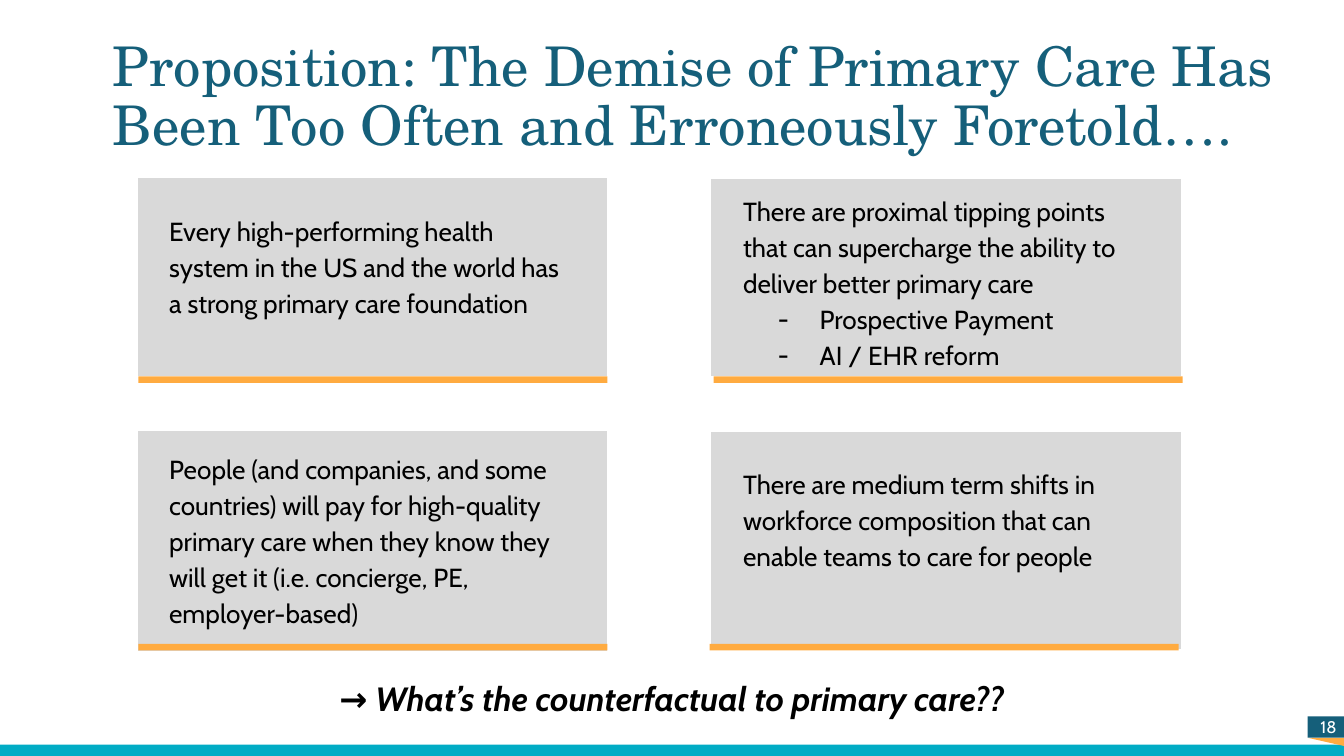
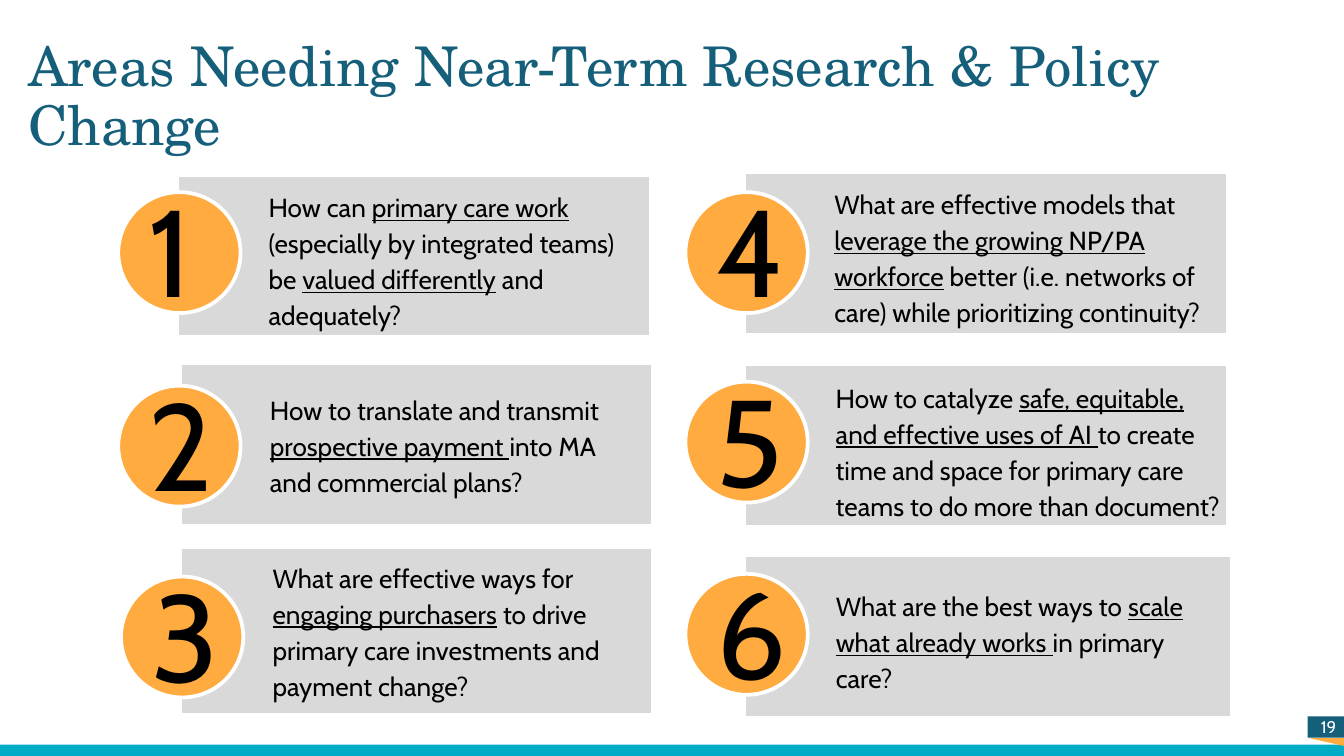
from dataclasses import dataclass

import lxml.etree
import pptx
import pptx.dml.color
import pptx.enum.shapes
import pptx.enum.text
import pptx.oxml.ns
import pptx.util

Inches = pptx.util.Inches
Shape = pptx.enum.shapes.MSO_SHAPE
Align = pptx.enum.text.PP_ALIGN
Anchor = pptx.enum.text.MSO_ANCHOR
qn = pptx.oxml.ns.qn


@dataclass(frozen=True)
class Theme:
    heading_font: str = "TeX Gyre Schola"
    body_font: str = "Cabin"
    teal: str = "155F7A"
    cyan: str = "00ACC5"
    orange: str = "FFAB40"
    grey: str = "D9D9D9"
    white: str = "FFFFFF"
    black: str = "000000"
    title_size: float = 29.3
    body_size: float = 14
    closing_size: float = 18
    number_size: float = 66
    page_size: float = 9
    body_spacing: float = 1.15
    title_spacing: float = 0.9


class Deck:
    """Holds the theme and the current slide."""

    def __init__(self, theme):
        self.theme = theme
        self.presentation = pptx.Presentation()
        # Widescreen, 16 to 9
        self.presentation.slide_width = Inches(10)
        self.presentation.slide_height = Inches(10) * 9 // 16
        self.slide = None

    def start_slide(self, title, title_box, page):
        theme = self.theme
        self.slide = self.presentation.slides.add_slide(self.presentation.slide_layouts[6])
        self.text(title, title_box, insets=(0, 0, 0, 0), spacing=theme.title_spacing,
                  name=theme.heading_font, size=theme.title_size, color=theme.teal)
        self.footer(page)

    def shape(self, kind, box, fill, outline=None):
        shape = self.slide.shapes.add_shape(kind, *map(Inches, box))
        shape.shadow.inherit = False
        shape.fill.solid()
        shape.fill.fore_color.rgb = pptx.dml.color.RGBColor.from_string(fill)
        if outline:
            shape.line.color.rgb = pptx.dml.color.RGBColor.from_string(outline)
            shape.line.width = pptx.util.Pt(2)
        else:
            shape.line.fill.background()
        return shape

    def card(self, box):
        self.shape(Shape.RECTANGLE, box, self.theme.grey, self.theme.white)

    def accent(self, left, top):
        self.shape(Shape.RECTANGLE, (left, top, 3.49, 0.05), self.theme.orange)

    def number_disc(self, number, left, top):
        self.shape(Shape.OVAL, (left, top, 0.91, 0.9), self.theme.orange, self.theme.white)
        self.text(str(number), (left + 0.13, top - 0.18, 0.57, 1.21),
                  spacing=1.0, size=self.theme.number_size)

    def footer(self, page):
        theme = self.theme
        self.shape(Shape.RECTANGLE, (0, 5.54, 10.04, 0.1), theme.cyan)
        fold = self.shape(Shape.RIGHT_TRIANGLE, (9.85, 5.37, 0.07, 0.31), theme.orange)
        fold.rotation = 270
        fold.element.spPr.find(qn("a:xfrm")).set("flipH", "1")
        tab = self.shape(Shape.RECTANGLE, (9.73, 5.33, 0.31, 0.16), theme.teal)
        self.fill_frame(tab.text_frame, str(page), insets=(0, 0, 0, 0.01), anchor=Anchor.MIDDLE,
                        align=Align.CENTER, spacing=1.0, size=theme.page_size, color=theme.white)

    def text(self, content, box, **options):
        textbox = self.slide.shapes.add_textbox(*map(Inches, box))
        self.fill_frame(textbox.text_frame, content, **options)

    def fill_frame(self, frame, content, bullets=(), insets=(0.1, 0.05, 0.1, 0.05),
                   anchor=Anchor.TOP, align=Align.LEFT, spacing=None, **font):
        """Underscores in the content switch underlining on and off."""
        left, top, right, bottom = map(Inches, insets)
        frame_format = {"word_wrap": True, "vertical_anchor": anchor, "margin_left": left,
                        "margin_top": top, "margin_right": right, "margin_bottom": bottom}
        for key, value in frame_format.items():
            setattr(frame, key, value)
        for index, line in enumerate((content, *bullets)):
            paragraph = frame.add_paragraph() if index else frame.paragraphs[0]
            if index:
                self.bullet(paragraph)
            paragraph.alignment = align
            paragraph.line_spacing = spacing or self.theme.body_spacing
            for part, words in enumerate(line.split("_")):
                run = paragraph.add_run()
                run.text = words
                self.style_font(run.font, underline=part % 2 == 1, **font)

    def bullet(self, paragraph):
        paragraph.level = 1
        properties = paragraph._p.get_or_add_pPr()
        properties.set("marL", str(Inches(0.57)))
        properties.set("indent", str(Inches(-0.31)))
        color = lxml.etree.SubElement(properties, qn("a:buClr"))
        lxml.etree.SubElement(color, qn("a:srgbClr"), val=self.theme.black)
        lxml.etree.SubElement(properties, qn("a:buFont"), typeface=self.theme.body_font)
        lxml.etree.SubElement(properties, qn("a:buChar"), char="-")

    def style_font(self, font, size=None, color=None, **values):
        font_format = {"name": self.theme.body_font,
                       "size": pptx.util.Pt(size or self.theme.body_size), **values}
        for key, value in font_format.items():
            setattr(font, key, value)
        font.color.rgb = pptx.dml.color.RGBColor.from_string(color or self.theme.black)


def build_proposition(deck):
    deck.start_slide("Proposition: The Demise of Primary Care Has Been Too Often "
                     "and Erroneously Foretold….", (0.84, 0.29, 8.89, 0.89), 18)
    deck.text("→ What’s the counterfactual to primary care??", (0.46, 4.95, 9.08, 0.72),
              align=Align.CENTER, size=deck.theme.closing_size, bold=True, italic=True)

    # Each argument: card left, top, height; text top, height; accent left, top
    arguments = [
        ((1.01, 1.31, 1.5), (1.52, 0.9), (1.03, 2.8),
         "Every high-performing health system in the US and the world has a strong "
         "primary care foundation", ()),
        ((1.01, 3.19, 1.67), (3.29, 1.44), (1.03, 4.79),
         "People (and companies, and some countries) will pay for high-quality primary care "
         "when they know they will get it (i.e. concierge, PE, employer-based)", ()),
        ((5.28, 1.32, 1.49), (1.37, 1.44), (5.31, 2.8),
         "There are proximal tipping points that can supercharge the ability to deliver "
         "better primary care", ("Prospective Payment", "AI / EHR reform")),
        ((5.28, 3.2, 1.64), (3.4, 0.9), (5.28, 4.79),
         "There are medium term shifts in workforce composition that can enable teams "
         "to care for people", ()),
    ]
    for (left, top, height), (text_top, text_height), accent, content, bullets in arguments:
        deck.card((left, top, 3.52, height))
        deck.text(content, (left + 0.15, text_top, 3.21, text_height), bullets=bullets)
        deck.accent(*accent)


def build_research_areas(deck):
    deck.start_slide("Areas Needing Near-Term Research & Policy Change",
                     (0.21, 0.29, 9.51, 0.44), 19)

    # Each area: card box, text box, disc corner, question
    areas = [
        ((1.32, 1.3, 3.52, 1.21), (1.9, 1.34, 2.83, 1.17), (0.88, 1.43),
         "How can _primary care work_ (especially by integrated teams) be "
         "_valued differently_ and adequately?"),
        ((1.34, 2.7, 3.52, 1.21), (1.91, 2.85, 2.7, 0.9), (0.88, 2.87),
         "How to translate and transmit _prospective payment _into MA and commercial plans?"),
        ((1.34, 4.07, 3.52, 1.25), (1.93, 4.1, 3.09, 1.17), (0.9, 4.29),
         "What are effective ways for _engaging purchasers_ to drive primary care "
         "investments and payment change?"),
        ((5.54, 1.28, 3.6, 1.21), (6.11, 1.32, 3.07, 1.17), (5.1, 1.43),
         "What are effective models that _leverage the growing NP/PA workforce_ better "
         "(i.e. networks of care) while prioritizing continuity?"),
        ((5.54, 2.71, 3.6, 1.21), (6.12, 2.76, 3.06, 1.17), (5.1, 2.84),
         "How to catalyze _safe, equitable, and effective uses of AI _to create time and "
         "space for primary care teams to do more than document?"),
        ((5.54, 4.13, 3.63, 1.21), (6.12, 4.31, 3.01, 0.9), (5.1, 4.27),
         "What are the best ways to _scale what already works _in primary care?"),
    ]
    for number, (card, text_box, disc, question) in enumerate(areas, start=1):
        deck.card(card)
        deck.text(question, text_box)
        deck.number_disc(number, *disc)


def main():
    deck = Deck(Theme())
    build_proposition(deck)
    build_research_areas(deck)
    deck.presentation.save("out.pptx")


if __name__ == "__main__":
    main()
